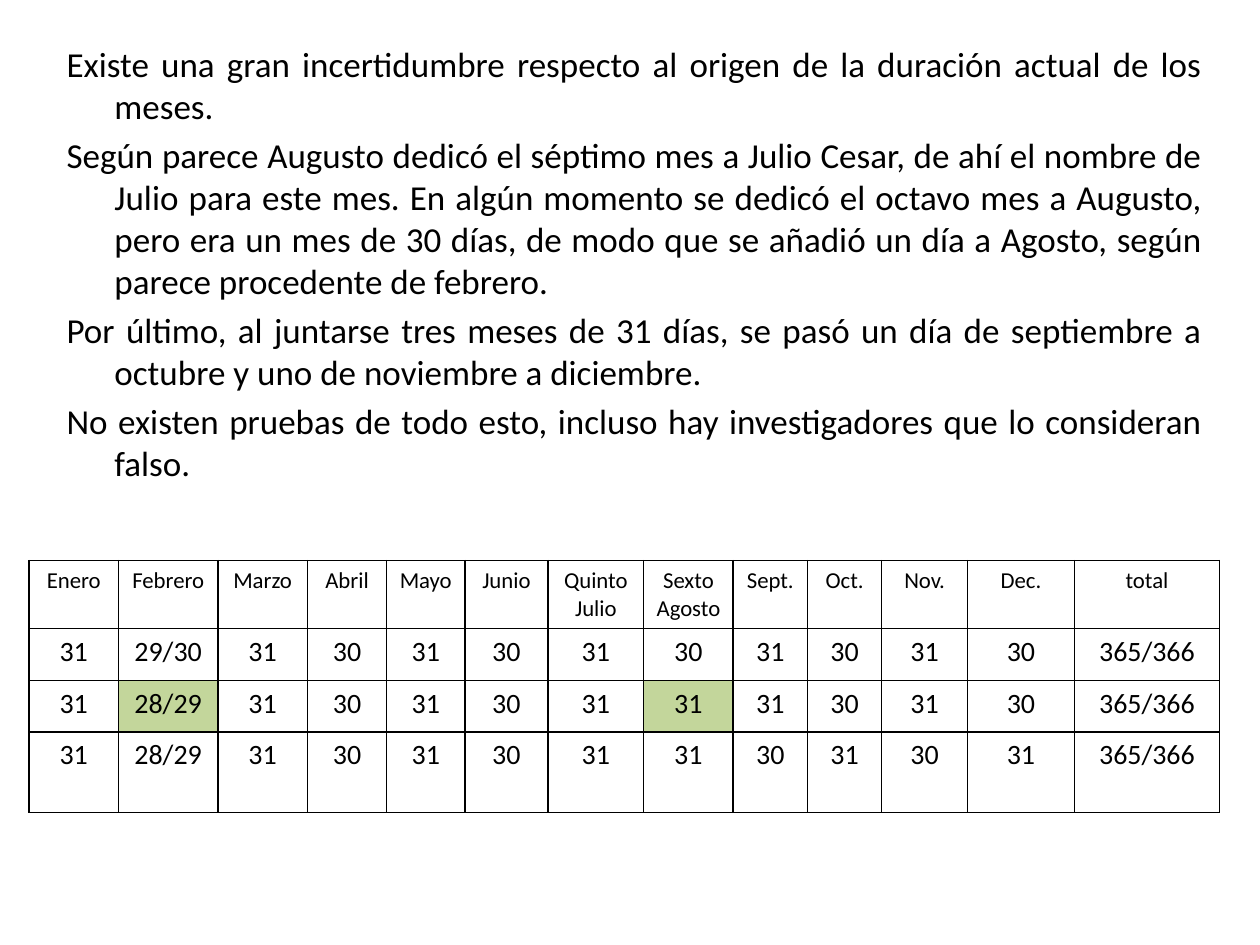
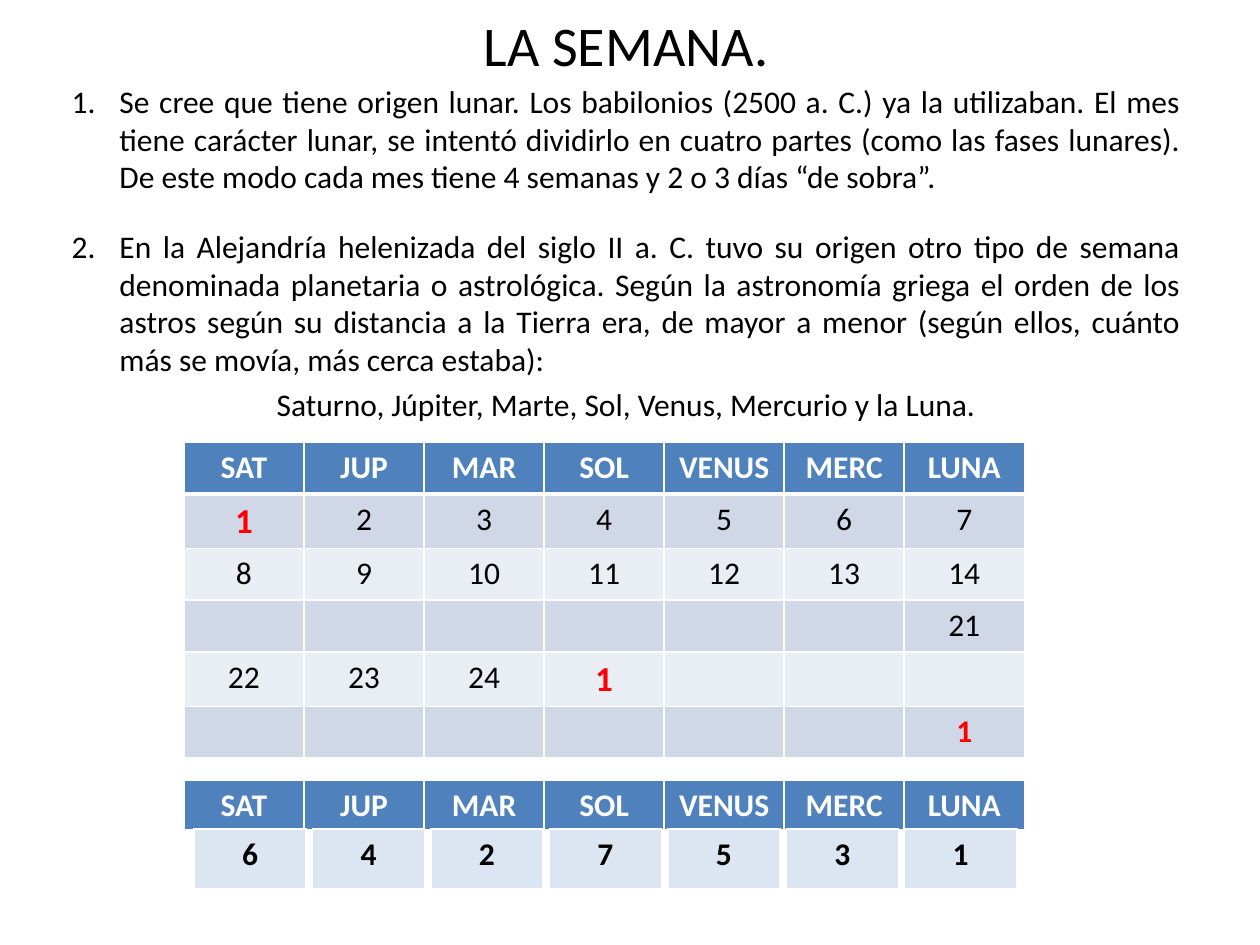
"""Build two slides on the length of the months and the origin of the week."""
from lxml import etree
from pptx import Presentation
from pptx.dml.color import RGBColor
from pptx.enum.text import MSO_ANCHOR, PP_ALIGN
from pptx.oxml.ns import qn
from pptx.util import Inches, Pt

CENTER, JUSTIFY = PP_ALIGN.CENTER, PP_ALIGN.JUSTIFY
TOP, MIDDLE = MSO_ANCHOR.TOP, MSO_ANCHOR.MIDDLE
TITLE_ONLY, BLANK = 5, 6
FONT = "Calibri"
BLACK, WHITE, RED = "000000", "FFFFFF", "FF0000"
GREEN, BLUE, PALE_BLUE = "C3D69B", "4F81BD", "DCE6F2"
BANDS = ("D0D8E8", "E9EDF4")
HANGING = 0.38

MONTH_NOTES = [
    "Existe una gran incertidumbre respecto al origen de la duración actual de los meses.",
    "Según parece Augusto dedicó el séptimo mes a Julio Cesar, de ahí el nombre de Julio "
    "para este mes. En algún momento se dedicó el octavo mes a Augusto, pero era un mes de "
    "30 días, de modo que se añadió un día a Agosto, según parece procedente de febrero.",
    "Por último, al juntarse tres meses de 31 días, se pasó un día de septiembre a octubre "
    "y uno de noviembre a diciembre.",
    "No existen pruebas de todo esto, incluso hay investigadores que lo consideran falso.",
]
MONTHS = ["Enero", "Febrero", "Marzo", "Abril", "Mayo", "Junio", "Quinto\nJulio",
          "Sexto\nAgosto", "Sept.", "Oct.", "Nov.", "Dec.", "total"]
MONTH_DAYS = [
    "31 29/30 31 30 31 30 31 30 31 30 31 30 365/366".split(),
    "31 28/29 31 30 31 30 31 31 31 30 31 30 365/366".split(),
    "31 28/29 31 30 31 30 31 31 30 31 30 31 365/366".split(),
]
CHANGED_DAYS = {(2, 1), (2, 7)}
MONTH_WIDTHS = [0.71, 0.79, 0.71, 0.63, 0.62, 0.66, 0.76, 0.71, 0.59, 0.59, 0.68, 0.85, 1.15]
MONTH_HEIGHTS = [0.54, 0.41, 0.41, 0.64]

WEEK_TITLE = "LA SEMANA."
WEEK_NOTES = [
    "Se cree que tiene origen lunar. Los babilonios (2500 a. C.) ya la utilizaban. El mes "
    "tiene carácter lunar, se intentó dividirlo en cuatro partes (como las fases lunares). "
    "De este modo cada mes tiene 4 semanas y 2 o 3 días “de sobra”.",
    "En la Alejandría helenizada del siglo II a. C. tuvo su origen otro tipo de semana "
    "denominada planetaria o astrológica. Según la astronomía griega el orden de los astros "
    "según su distancia a la Tierra era, de mayor a menor (según ellos, cuánto más se movía, "
    "más cerca estaba):",
]
PLANET_ORDER = "Saturno, Júpiter, Marte, Sol, Venus, Mercurio y la Luna."
PLANETS = ["SAT", "JUP", "MAR", "SOL", "VENUS", "MERC", "LUNA"]
HOURS = [
    ["1", "2", "3", "4", "5", "6", "7"],
    ["8", "9", "10", "11", "12", "13", "14"],
    ["", "", "", "", "", "", "21"],
    ["22", "23", "24", "1", "", "", ""],
    ["", "", "", "", "", "", "1"],
]
FIRST_HOUR_SIZES = {(1, 0): 20, (4, 3): 20, (5, 6): 18}
HOUR_HEIGHTS = [0.41, 0.43, 0.41, 0.41, 0.43, 0.41]
DAY_ORDER = ["6", "4", "2", "7", "5", "3", "1"]
PLANET_LEFT, PLANET_WIDTH = 1.46, 6.67 / 7
DAY_LEFT, DAY_STEP = 1.54, 0.94


def color(value):
    """Turn a hex string into a colour."""
    return RGBColor.from_string(value)


def format_paragraph(para, size, align, ink=BLACK, bold=False, before=0):
    """Give a paragraph its font, alignment and spacing."""
    para.alignment = align
    para.space_before = Pt(before)
    para.font.name = FONT
    para.font.size = Pt(size)
    para.font.bold = bold
    para.font.color.rgb = color(ink)


def hang(para, numbered=False):
    """Indent all lines but the first, with an automatic number if wanted."""
    properties = para._p.get_or_add_pPr()
    properties.set("marL", str(Inches(HANGING)))
    properties.set("indent", str(-Inches(HANGING)))
    if numbered:
        number = etree.Element(qn("a:buAutoNum"), type="arabicPeriod")
        properties.find(qn("a:defRPr")).addprevious(number)


def add_text(slide, left, top, width, height, texts):
    """Add a wrapping text box and return its paragraphs."""
    frame = slide.shapes.add_textbox(*map(Inches, (left, top, width, height))).text_frame
    frame.word_wrap = True
    frame.text = "\n".join(texts)
    return frame.paragraphs


def set_borders(cell, line, bottom):
    """Draw the four borders of a cell, the bottom one with its own width."""
    properties = cell._tc.get_or_add_tcPr()
    for side, width in (("L", 1), ("R", 1), ("T", 1), ("B", bottom)):
        border = etree.SubElement(properties, qn(f"a:ln{side}"), w=str(Pt(width)))
        fill = etree.SubElement(border, qn("a:solidFill"))
        etree.SubElement(fill, qn("a:srgbClr"), val=line)


def add_grid(slide, left, top, widths, heights, rows, line, style):
    """Add a table; style(row, column) gives size, ink, bold, fill and bottom width."""
    frame = slide.shapes.add_table(len(rows), len(widths), Inches(left), Inches(top),
                                   Inches(sum(widths)), Inches(sum(heights)))
    table = frame.table
    table.first_row = table.horz_banding = False
    for column, width in zip(table.columns, widths):
        column.width = Inches(width)
    for row, height in zip(table.rows, heights):
        row.height = Inches(height)
    for row_index, texts in enumerate(rows):
        for column_index, text in enumerate(texts):
            size, ink, bold, fill, bottom = style(row_index, column_index)
            cell = table.cell(row_index, column_index)
            cell.margin_left = cell.margin_right = Inches(0.05)
            cell.text = text
            for para in cell.text_frame.paragraphs:
                format_paragraph(para, size, CENTER, ink, bold)
            set_borders(cell, line, bottom)
            if fill:
                cell.fill.solid()
                cell.fill.fore_color.rgb = color(fill)
            else:
                cell.fill.background()


def month_style(row, column):
    """Style the month table."""
    fill = GREEN if (row, column) in CHANGED_DAYS else None
    return 16 if row else 13, BLACK, False, fill, 1


def hour_style(row, column):
    """Style the planet header and the banded hours below it."""
    if row == 0:
        return 18, WHITE, True, BLUE, 3
    band = BANDS[(row - 1) % 2]
    if (row, column) in FIRST_HOUR_SIZES:
        return FIRST_HOUR_SIZES[row, column], RED, True, band, 1
    return 18, BLACK, False, band, 1


def day_style(row, column):
    """Style a single day number."""
    return 18, BLACK, True, PALE_BLUE, 3


def build_months(deck):
    """Build the slide on the length of the months."""
    slide = deck.slides.add_slide(deck.slide_layouts[BLANK])
    for para in add_text(slide, 0.43, 0.29, 9.21, 3.8, MONTH_NOTES):
        format_paragraph(para, 20, JUSTIFY, before=4)
        hang(para)
    add_grid(slide, 0.23, 4.45, MONTH_WIDTHS, MONTH_HEIGHTS, [MONTHS] + MONTH_DAYS,
             BLACK, month_style)


def build_week(deck):
    """Build the slide on the origin of the week."""
    slide = deck.slides.add_slide(deck.slide_layouts[TITLE_ONLY])
    title = slide.shapes.title
    title.left, title.top, title.width, title.height = map(Inches, (0.47, 0.03, 9, 0.64))
    title.text_frame.text = WEEK_TITLE
    title.text_frame.vertical_anchor = MIDDLE
    format_paragraph(title.text_frame.paragraphs[0], 32, CENTER)

    *notes, planets = add_text(slide, 0.47, 0.6, 9, 2.85, WEEK_NOTES + [PLANET_ORDER])
    for para, before in zip(notes, (0, 18)):
        format_paragraph(para, 18, JUSTIFY, before=before)
        hang(para, numbered=True)
    format_paragraph(planets, 18, CENTER, before=4)

    widths = [PLANET_WIDTH] * len(PLANETS)
    add_grid(slide, PLANET_LEFT, 3.51, widths, HOUR_HEIGHTS, [PLANETS] + HOURS,
             WHITE, hour_style)
    add_grid(slide, PLANET_LEFT, 6.19, widths, [0.41], [PLANETS], WHITE, hour_style)
    for index, day in enumerate(DAY_ORDER):
        add_grid(slide, DAY_LEFT + index * DAY_STEP, 6.58, [0.89], [0.49], [[day]],
                 WHITE, day_style)


def main():
    """Build and save the deck."""
    deck = Presentation()
    deck.slide_width, deck.slide_height = Inches(10), Inches(7.5)
    build_months(deck)
    build_week(deck)
    deck.save("out.pptx")


if __name__ == "__main__":
    main()
